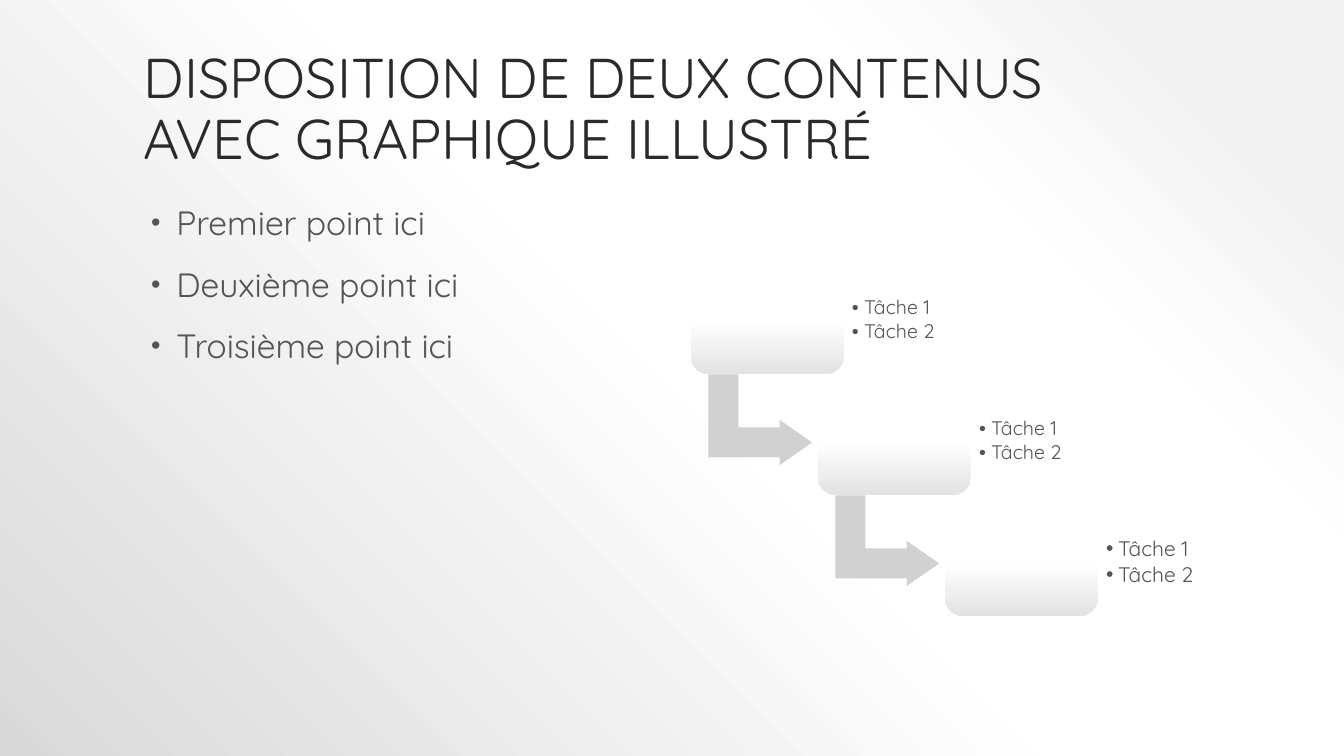
"""Builds a slide with a bullet list and a three-step descending process."""
from pptx import Presentation
from pptx.dml.color import RGBColor
from pptx.enum.shapes import MSO_SHAPE
from pptx.enum.text import MSO_ANCHOR
from pptx.oxml import parse_xml
from pptx.oxml.ns import nsdecls, qn
from pptx.util import Inches, Pt

TITLE = "DISPOSITION DE DEUX CONTENUS\vAVEC GRAPHIQUE ILLUSTRÉ"
POINTS = ["Premier point ici", "Deuxième point ici", "Troisième point ici"]
TASKS = ["Tâche\u00a01", "Tâche\u00a02"]
TASK_SIZES = [14, 14, 15]

FONT = "Quicksand"
DARK, GREY, ARROW = "2A2A2A", "545454", "D1D1D1"
PAGE_STOPS = [(10, "F2F2F2"), (28, "FFFFFF"), (48, "FFFFFF"), (100, "D9D9D9")]
STEP_STOPS = [(0, "FFFFFF"), (50, "FFFFFF"), (100, "E3E3E3")]
PAGE_SHADE = '<a:path path="circle"><a:fillToRect l="100000" b="100000"/></a:path>'
STEP_SHADE = '<a:lin ang="5400000" scaled="0"/>'

STEP_LEFT, STEP_TOP = 6.85, 2.65
STEP_WIDTH, STEP_HEIGHT = 1.52, 1.06
SHIFT_X, SHIFT_Y = 1.26, 1.2
ARROW_WIDTH, ARROW_HEIGHT = 0.9, 1.03


def color(value):
    return RGBColor.from_string(value)


def inches(*lengths):
    return [Inches(length) for length in lengths]


def shade(fill, element, stops, direction):
    fill.solid()
    solid = next(element.iter(qn("a:solidFill")))
    marks = "".join(
        f'<a:gs pos="{place * 1000}"><a:srgbClr val="{value}"/></a:gs>'
        for place, value in stops
    )
    gradient = parse_xml(
        f'<a:gradFill {nsdecls("a")} rotWithShape="1">'
        f"<a:gsLst>{marks}</a:gsLst>{direction}</a:gradFill>"
    )
    solid.getparent().replace(solid, gradient)


def add_bullet(para, indent, hanging, value, percent):
    properties = para._p.get_or_add_pPr()
    properties.set("marL", str(Inches(indent)))
    properties.set("indent", str(-Inches(hanging)))
    for body in (
        f'buClr {nsdecls("a")}><a:srgbClr val="{value}"/></a:buClr>',
        f'buSzPct {nsdecls("a")} val="{percent * 1000}"/>',
        f'buFont {nsdecls("a")} typeface="Arial"/>',
        f'buChar {nsdecls("a")} char="•"/>',
    ):
        properties.append(parse_xml("<a:" + body))


def add_text(page, lines, place, size, value=GREY, anchor=MSO_ANCHOR.TOP,
             inset=None, before=0, after=0, bullet=None):
    frame = page.shapes.add_textbox(*inches(*place)).text_frame
    frame.word_wrap = True
    frame.vertical_anchor = anchor
    if inset is not None:
        frame.margin_left = frame.margin_right = Inches(inset)
        frame.margin_top = frame.margin_bottom = Inches(inset)
    frame.text = "\n".join(lines)
    for para in frame.paragraphs:
        para.line_spacing = 0.9
        para.space_before, para.space_after = Pt(before), Pt(after)
        if bullet:
            add_bullet(para, *bullet)
        for span in para.runs:
            span.font.name, span.font.size = FONT, Pt(size)
            span.font.color.rgb = color(value)


def add_shape(page, kind, place, adjustments):
    shape = page.shapes.add_shape(kind, *inches(*place))
    shape.shadow.inherit = False
    shape.line.fill.background()
    for index, amount in enumerate(adjustments):
        shape.adjustments[index] = amount
    return shape


def add_step(page, index, last):
    left, top = STEP_LEFT + index * SHIFT_X, STEP_TOP + index * SHIFT_Y
    if not last:
        place = (left + 0.24, top + 1, ARROW_WIDTH, ARROW_HEIGHT)
        arrow = add_shape(page, MSO_SHAPE.BENT_UP_ARROW, place, (0.33, 0.25, 0.36))
        arrow.rotation = 90
        arrow.fill.solid()
        arrow.fill.fore_color.rgb = color(ARROW)
    place = (left, top, STEP_WIDTH, STEP_HEIGHT)
    step = add_shape(page, MSO_SHAPE.ROUNDED_RECTANGLE, place, (0.17,))
    shade(step.fill, step.element.spPr, STEP_STOPS, STEP_SHADE)
    add_text(page, TASKS, (left + STEP_WIDTH, top + 0.1, 1.11, 0.86),
             TASK_SIZES[index], anchor=MSO_ANCHOR.MIDDLE, inset=0.08,
             after=2.1, bullet=(0.12, 0.12, GREY, 100))


def main():
    deck = Presentation()
    deck.slide_width, deck.slide_height = inches(13.33, 7.5)
    page = deck.slides.add_slide(deck.slide_layouts[6])
    shade(page.background.fill, page.element, PAGE_STOPS, PAGE_SHADE)
    add_text(page, [TITLE], (1.33, 0.3, 10.67, 1.45), 40, value=DARK,
             anchor=MSO_ANCHOR.BOTTOM)
    add_text(page, POINTS, (1.35, 2, 5.15, 4.75), 24, before=18,
             bullet=(0.3, 0.25, GREY, 80))
    for index in range(len(TASK_SIZES)):
        add_step(page, index, last=index == len(TASK_SIZES) - 1)
    deck.save("out.pptx")


if __name__ == "__main__":
    main()
